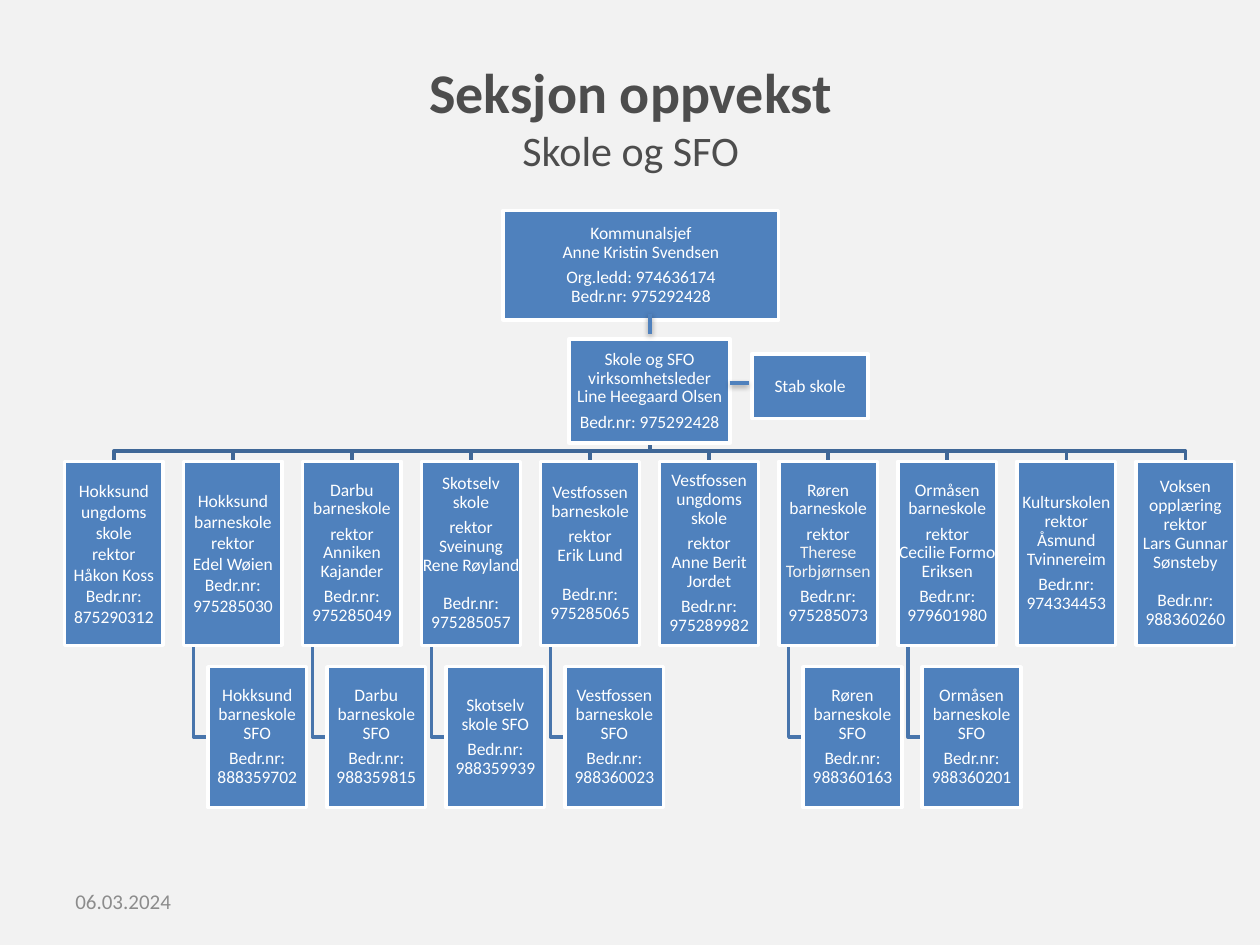
import copy
import pptx
import pptx.util
import pptx.dml.color
import pptx.enum.shapes
import pptx.enum.text
import pptx.oxml
import pptx.oxml.ns

Cm = pptx.util.Cm
Pt = pptx.util.Pt
RGB = pptx.dml.color.RGBColor.from_string
MID = pptx.enum.text.MSO_ANCHOR.MIDDLE
CENTER = pptx.enum.text.PP_ALIGN.CENTER
LEFT = pptx.enum.text.PP_ALIGN.LEFT


class Theme:
    font = "Calibri"
    back, box, white = RGB("F2F2F2"), RGB("4F81BD"), RGB("FFFFFF")
    trunk, branch = RGB("3F6797"), RGB("4875AC")
    title, date = RGB("4D4D4D"), RGB("8C8C8C")
    head, sub, small, body = Pt(32), Pt(24), Pt(12), Pt(10)
    line = Pt(2)


def write(frame, text, size, color, para, inset=None):
    form = {"word_wrap": True, "vertical_anchor": MID}
    if inset is not None:
        for side in ("left", "right", "top", "bottom"):
            form["margin_" + side] = inset
    for key, val in form.items():
        setattr(frame, key, val)
    gap = False
    fresh = True
    for part in text.split("|"):
        if not part:
            gap = True
            continue
        item = frame.paragraphs[0] if fresh else frame.add_paragraph()
        item.text = part
        for key, val in para.items():
            setattr(item, key, val)
        if gap:
            item.space_before = Pt(7.5)
        for run in item.runs:
            for key, val in {"name": Theme.font, "size": size, "bold": False}.items():
                setattr(run.font, key, val)
            run.font.color.rgb = color
        for stop in item._p.findall(pptx.oxml.ns.qn("a:br")):
            stop.append(copy.deepcopy(item.runs[0]._r.rPr))
        gap = fresh = False


def add_box(left, top, wide, high, text, space=0.9):
    box = shapes.add_shape(pptx.enum.shapes.MSO_SHAPE.RECTANGLE,
                           Cm(left), Cm(top), Cm(wide), Cm(high))
    box.shadow.inherit = False
    box.fill.solid()
    box.fill.fore_color.rgb = Theme.box
    box.line.color.rgb = Theme.white
    box.line.width = Theme.line
    para = {"alignment": CENTER, "line_spacing": space, "space_after": Pt(3.5)}
    write(box.text_frame, text, Theme.body, Theme.white, para, Cm(0.02))
    return box


deck = pptx.Presentation()
deck.slide_width, deck.slide_height = Cm(25.4), Cm(19.05)
slide = deck.slides.add_slide(deck.slide_layouts[5])
shapes = slide.shapes
slide.background.fill.solid()
slide.background.fill.fore_color.rgb = Theme.back

title = shapes.title
place = {"left": Cm(1.3), "top": Cm(0.76), "width": Cm(22.83), "height": Cm(3.18)}
for key, val in place.items():
    setattr(title, key, val)
title.text_frame.auto_size = pptx.enum.text.MSO_AUTO_SIZE.NONE
write(title.text_frame, "Seksjon oppvekst\nSkole og SFO", Theme.head,
      Theme.title, {"alignment": CENTER})
first, second = title.text_frame.paragraphs[0].runs
first.font.bold = True
second.font.size = Theme.sub

schools = [
    ("Hokksund ungdoms\nskole\nrektor\nHåkon Koss\nBedr.nr: 875290312", ""),
    ("Hokksund barneskole\nrektor\nEdel Wøien\nBedr.nr: 975285030",
     "Hokksund barneskole SFO|Bedr.nr: 888359702"),
    ("Darbu barneskole|rektor\nAnniken Kajander|Bedr.nr: 975285049",
     "Darbu barneskole SFO|Bedr.nr: 988359815"),
    ("Skotselv skole|rektor\nSveinung Rene Røyland||Bedr.nr: 975285057",
     "Skotselv skole SFO|Bedr.nr: 988359939"),
    ("Vestfossen barneskole|rektor\nErik Lund||Bedr.nr: 975285065",
     "Vestfossen barneskole SFO|Bedr.nr: 988360023"),
    ("Vestfossen ungdoms\nskole|rektor\nAnne Berit Jordet|Bedr.nr: 975289982", ""),
    ("Røren barneskole|rektor\nTherese Torbjørnsen|Bedr.nr: 975285073",
     "Røren barneskole SFO|Bedr.nr: 988360163"),
    ("Ormåsen barneskole|rektor\nCecilie Formo Eriksen|Bedr.nr: 979601980",
     "Ormåsen barneskole SFO|Bedr.nr: 988360201"),
    ("Kulturskolen\nrektor\nÅsmund Tvinnereim|Bedr.nr: 974334453", ""),
    ("Voksen\nopplæring\nrektor\nLars Gunnar Sønsteby||Bedr.nr: 988360260", ""),
]
start, pitch, wide, shift = 1.3, 2.4, 1.99, 0.49
axis, top, foot, low = 13.1, 9.3, 13.01, 13.44

paths = []
for col, (school, care) in enumerate(schools):
    left = start + col * pitch
    mid = left + wide / 2
    paths.append((Theme.trunk, [(axis, 8.92), (axis, 9.09), (mid, 9.09), (mid, top)]))
    if care:
        stem = left + 0.2
        paths.append((Theme.branch, [(stem, foot), (stem, 14.86), (left + shift, 14.86)]))
for color, points in paths:
    dots = [(Cm(x), Cm(y)) for x, y in points]
    build = shapes.build_freeform(*dots[0])
    build.add_line_segments(dots[1:], close=False)
    path = build.convert_to_shape()
    path.shadow.inherit = False
    path.fill.background()
    path.line.color.rgb = color
    path.line.width = Theme.line

add_box(10.14, 4.24, 5.56, 2.21,
        "Kommunalsjef\nAnne Kristin Svendsen|Org.ledd: 974636174\nBedr.nr: 975292428")
add_box(11.47, 6.83, 3.25, 2.1,
        "Skole og SFO\nvirksomhetsleder\nLine Heegaard Olsen|Bedr.nr: 975292428")
add_box(15.16, 7.14, 2.34, 1.3, "Stab skole")
for col, (school, care) in enumerate(schools):
    left = start + col * pitch
    box = add_box(left, top, wide, foot - top, school, 1.0 if col < 2 else 0.9)
    if "Therese" in school:
        box.text_frame.paragraphs[1].runs[1].font.color.rgb = Theme.back
    if care:
        add_box(left + shift, low, wide, 2.84, care)

shade = (
    '<a:effectLst xmlns:a="http://schemas.openxmlformats.org/drawingml/2006/main">'
    '<a:outerShdw blurRad="40000" dist="20000" dir="5400000" rotWithShape="0">'
    '<a:srgbClr val="000000"><a:alpha val="38000"/></a:srgbClr>'
    '</a:outerShdw></a:effectLst>'
)
for ends in ((axis, 6.32, axis, 6.73), (14.71, 7.72, 15.09, 7.72)):
    link = shapes.add_connector(pptx.enum.shapes.MSO_CONNECTOR.STRAIGHT,
                                *[Cm(end) for end in ends])
    link.line.color.rgb = Theme.box
    link.line.width = Theme.line
    link._element.spPr.append(pptx.oxml.parse_xml(shade))

date = shapes.add_textbox(Cm(1.27), Cm(17.65), Cm(5.92), Cm(1.02))
write(date.text_frame, "06.03.2024", Theme.small, Theme.date, {"alignment": LEFT})

deck.save("out.pptx")
